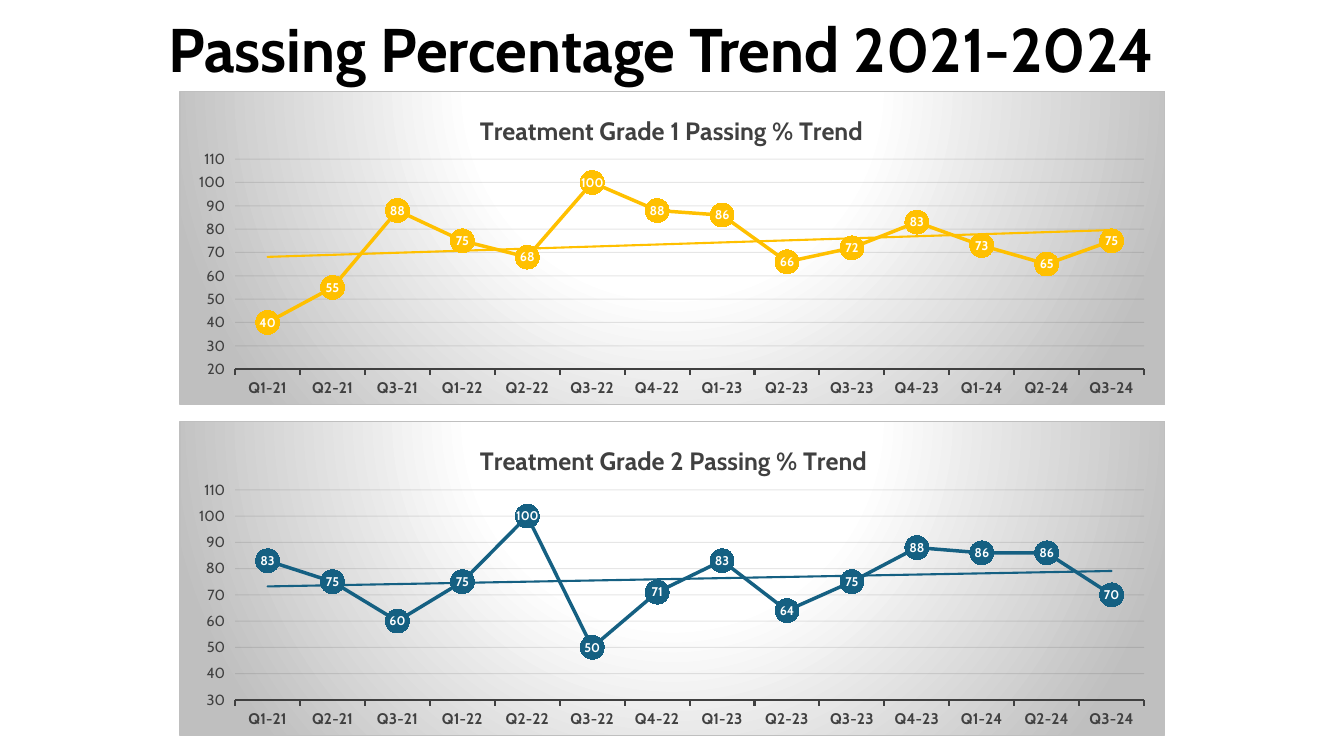
from lxml.etree import SubElement
from pptx import Presentation
from pptx.chart.data import CategoryChartData
from pptx.dml.color import RGBColor
from pptx.enum.chart import XL_CHART_TYPE, XL_LABEL_POSITION, XL_MARKER_STYLE, XL_TICK_MARK
from pptx.enum.text import MSO_ANCHOR, PP_ALIGN
from pptx.oxml import parse_xml
from pptx.oxml.ns import nsdecls, qn
from pptx.util import Pt

QUARTERS = ["Q1-21", "Q2-21", "Q3-21", "Q1-22", "Q2-22", "Q3-22", "Q4-22",
            "Q1-23", "Q2-23", "Q3-23", "Q4-23", "Q1-24", "Q2-24", "Q3-24"]
# title, top, axis minimum, colour, passing percentages
TRENDS = [
    ("Treatment Grade 1 Passing % Trend", 64.8, 20, "FFC000",
     [40, 55, 88, 75, 68, 100, 88, 86, 66, 72, 83, 73, 65, 75]),
    ("Treatment Grade 2 Passing % Trend", 301, 30, "156082",
     [83, 75, 60, 75, 100, 50, 71, 83, 64, 75, 88, 86, 86, 70]),
]

BACKGROUND = f"""<c:spPr {nsdecls("c", "a")}>
  <a:gradFill>
    <a:gsLst>
      <a:gs pos="0"><a:srgbClr val="FFFFFF"/></a:gs>
      <a:gs pos="39000"><a:srgbClr val="FFFFFF"/></a:gs>
      <a:gs pos="100000"><a:srgbClr val="BFBFBF"/></a:gs>
    </a:gsLst>
    <a:path path="circle"><a:fillToRect l="50000" t="-80000" r="50000" b="180000"/></a:path>
  </a:gradFill>
  <a:ln w="9525"><a:solidFill><a:srgbClr val="BFBFBF"/></a:solidFill></a:ln>
</c:spPr>"""
TREND_LINE = f"""<c:trendline {nsdecls("c", "a")}>
  <c:spPr><a:ln w="19050" cap="rnd"><a:solidFill><a:srgbClr val="%s"/></a:solidFill></a:ln></c:spPr>
  <c:trendlineType val="linear"/><c:dispRSqr val="0"/><c:dispEq val="0"/>
</c:trendline>"""
PLOT_LAYOUT = f"""<c:layout {nsdecls("c")}><c:manualLayout>
  <c:layoutTarget val="inner"/><c:xMode val="edge"/><c:yMode val="edge"/>
  <c:x val="0.056"/><c:y val="0.217"/><c:w val="0.923"/><c:h val="0.67"/>
</c:manualLayout></c:layout>"""
TITLE_LAYOUT = f"""<c:layout {nsdecls("c")}><c:manualLayout>
  <c:xMode val="edge"/><c:yMode val="edge"/><c:x val="0.3"/><c:y val="0.055"/>
</c:manualLayout></c:layout>"""


def rgb(value):
    return RGBColor.from_string(value)


def write(frame, text, size, color, bold=True, align=PP_ALIGN.CENTER, line_spacing=None):
    para = frame.paragraphs[0]
    para.alignment = align
    para.line_spacing = line_spacing
    span = para.add_run()
    span.text = text
    font = span.font
    font.name, font.size, font.bold = "Cabin", Pt(size), bold
    font.color.rgb = rgb(color)


deck = Presentation()
deck.slide_width, deck.slide_height = Pt(960), Pt(540)
page = deck.slides.add_slide(deck.slide_layouts[6])

box = page.shapes.add_textbox(Pt(50.4), Pt(-14.4), Pt(844.6), Pt(79.2))
box.text_frame.word_wrap = True
box.text_frame.vertical_anchor = MSO_ANCHOR.BOTTOM
write(box.text_frame, "Passing Percentage Trend 2021-2024", 44, "000000", line_spacing=0.9)

for title, top, minimum, color, percentages in TRENDS:
    data = CategoryChartData()
    data.categories = QUARTERS
    data.add_series("Series 1", percentages)
    chart = page.shapes.add_chart(XL_CHART_TYPE.LINE_MARKERS, Pt(128.2), Pt(top),
                                  Pt(704.2), Pt(224.6), data).chart
    chart.has_legend = False
    chart.font.name, chart.font.size = "Cabin", Pt(10)
    write(chart.chart_title.text_frame, title, 18, "404040")
    chart_title = chart.chart_title._element
    for layout in chart_title.findall(qn("c:layout")):
        chart_title.remove(layout)
    chart_title.find(qn("c:tx")).addnext(parse_xml(TITLE_LAYOUT))

    chart_part = chart._chartSpace.find(qn("c:chart"))
    chart_part.addnext(parse_xml(BACKGROUND))
    plot_area = chart_part.find(qn("c:plotArea"))
    for layout in plot_area.findall(qn("c:layout")):
        plot_area.remove(layout)
    plot_area.insert(0, parse_xml(PLOT_LAYOUT))

    quarters, percent = chart.category_axis, chart.value_axis
    for axis, size, bold in ((quarters, 11, True), (percent, 10.5, False)):
        font = axis.tick_labels.font
        font.name, font.size, font.bold = "Cabin", Pt(size), bold
        font.color.rgb = rgb("404040")
        axis.major_tick_mark = XL_TICK_MARK.OUTSIDE
    quarters.format.line.color.rgb = rgb("404040")
    quarters.format.line.width = Pt(1.5)
    percent.format.line.fill.background()
    percent.minimum_scale, percent.maximum_scale, percent.major_unit = minimum, 110, 10
    grid = percent.major_gridlines.format.line
    grid.color.rgb = rgb("0D0D0D")
    grid.width = Pt(0.75)
    grid_color = next(percent.major_gridlines._xAx.iter(qn("a:srgbClr")))
    SubElement(grid_color, qn("a:alpha"), val="10000")

    plot = chart.plots[0]
    plot.vary_by_categories = False
    series = plot.series[0]
    series.smooth = False
    series.format.line.color.rgb = rgb(color)
    series.format.line.width = Pt(2.5)
    series.marker.style, series.marker.size = XL_MARKER_STYLE.CIRCLE, 17
    series.marker.format.fill.solid()
    series.marker.format.fill.fore_color.rgb = rgb(color)
    series.marker.format.line.fill.background()
    labels = series.data_labels
    labels.show_value = True
    labels.position = XL_LABEL_POSITION.CENTER
    labels.font.name, labels.font.size, labels.font.bold = "Cabin", Pt(9), True
    labels.font.color.rgb = rgb("FFFFFF")
    series._element.find(qn("c:dLbls")).addnext(parse_xml(TREND_LINE % color))

deck.save("out.pptx")
